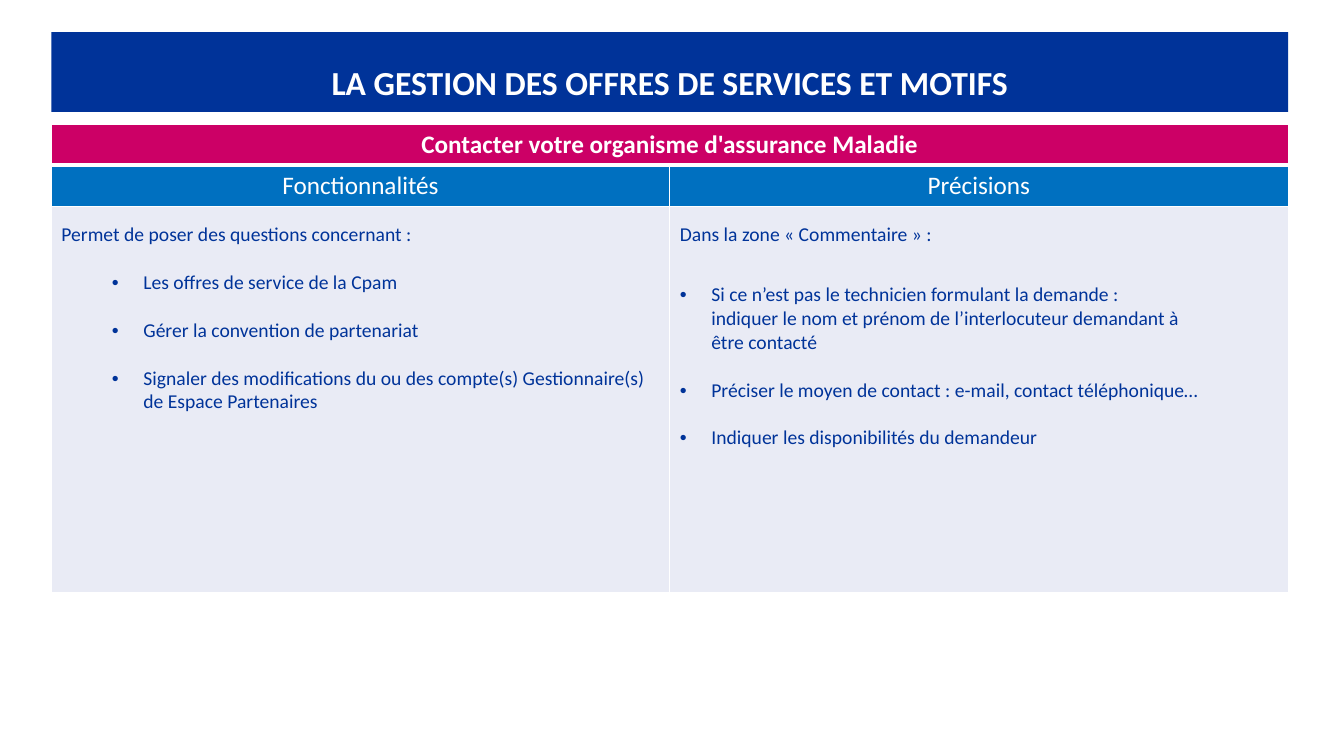
from dataclasses import dataclass

from lxml import etree
from pptx import Presentation
from pptx.dml.color import RGBColor
from pptx.enum.text import MSO_ANCHOR, MSO_AUTO_SIZE, PP_ALIGN
from pptx.oxml.ns import qn
from pptx.table import _Cell
from pptx.text.text import _Paragraph
from pptx.util import Pt

CENTER, LEFT = PP_ALIGN.CENTER, PP_ALIGN.LEFT
MIDDLE, TOP = MSO_ANCHOR.MIDDLE, MSO_ANCHOR.TOP
NO_FIT = MSO_AUTO_SIZE.NONE

WHITE = RGBColor(0xFF, 0xFF, 0xFF)
NAVY = RGBColor(0x00, 0x33, 0x99)
PINK = RGBColor(0xCC, 0x00, 0x66)
BLUE = RGBColor(0x00, 0x70, 0xC0)
PALE = RGBColor(0xE9, 0xEB, 0xF5)

FONT = "Calibri"
EDGE, WIDTH = 36.72, 883.44
ROWS = (28.8, 26.64, 275.76)
HANG = 22.5
DEEP = 58.5
GAP = 17.1


@dataclass
class Line:
    text: str
    size: float = 14
    color: RGBColor = NAVY
    bold: bool = False
    align: PP_ALIGN = LEFT
    space: float = 1
    before: float = 0
    margin: float = 0
    bullet: bool = False


def head(text: str, size: float = 18, bold: bool = False, space: float = 1) -> Line:
    return Line(text, size, WHITE, bold, CENTER, space)


def item(text: str, margin: float = HANG, before: float = GAP) -> Line:
    return Line(text, before=before, margin=margin, bullet=True)


TITLE = head("LA GESTION DES OFFRES DE SERVICES ET MOTIFS", 24, True, 1.5)
BANNER = head("Contacter votre organisme d'assurance Maladie", bold=True)
HEADS = (head("Fonctionnalités"), head("Précisions"))
BODIES = (
    [
        Line("Permet de poser des questions concernant :", space=1.5),
        item("Les offres de service de la Cpam", DEEP),
        item("Gérer la convention de partenariat", DEEP),
        item("Signaler des modifications du ou des compte(s) Gestionnaire(s) "
             "de Espace Partenaires", DEEP),
    ],
    [
        Line("Dans la zone « Commentaire » :", space=1.5),
        item("Si ce n’est pas le technicien formulant la demande :",
             before=1.5 * GAP),
        Line("indiquer le nom et prénom de l’interlocuteur demandant à",
             margin=HANG),
        Line("être contacté", margin=HANG),
        item("Préciser le moyen de contact : e-mail, contact téléphonique…"),
        item("Indiquer les disponibilités du demandeur"),
    ],
)


def write(par: _Paragraph, line: Line) -> None:
    props = par._p.get_or_add_pPr()
    props.set("marL", str(Pt(line.margin)))
    props.set("indent", str(-Pt(HANG) if line.bullet else 0))
    if line.bullet:
        etree.SubElement(props, qn("a:buFont"), typeface="Arial")
        etree.SubElement(props, qn("a:buChar"), char="•")
    else:
        etree.SubElement(props, qn("a:buNone"))
    par.alignment = line.align
    par.line_spacing = float(line.space)
    par.space_before = Pt(line.before)
    par.space_after = Pt(0)
    run = par.add_run()
    run.text = line.text
    run.font.name = FONT
    run.font.size = Pt(line.size)
    run.font.bold = line.bold
    run.font.color.rgb = line.color


def border(cell: _Cell, top: float, bottom: float) -> None:
    """Draw white lines on all four sides of the cell."""
    props = cell._tc.get_or_add_tcPr()
    sides = (("a:lnL", 1), ("a:lnR", 1), ("a:lnT", top), ("a:lnB", bottom))
    for spot, (tag, width) in enumerate(sides):
        edge = etree.Element(qn(tag), w=str(Pt(width)))
        fill = etree.SubElement(edge, qn("a:solidFill"))
        etree.SubElement(fill, qn("a:srgbClr"), val=str(WHITE))
        props.insert(spot, edge)


def fill_cell(cell: _Cell, lines: list[Line], color: RGBColor,
              top: float = 1, bottom: float = 1) -> None:
    cell.fill.solid()
    cell.fill.fore_color.rgb = color
    cell.vertical_anchor = TOP
    border(cell, top, bottom)
    frame = cell.text_frame
    for num, line in enumerate(lines):
        write(frame.add_paragraph() if num else frame.paragraphs[0], line)


def main() -> None:
    deck = Presentation()
    deck.slide_width, deck.slide_height = Pt(960), Pt(540)
    slide = deck.slides.add_slide(deck.slide_layouts[5])

    title = slide.shapes.title
    title.left, title.top = Pt(EDGE), Pt(23)
    title.width, title.height = Pt(WIDTH), Pt(57)
    title.fill.solid()
    title.fill.fore_color.rgb = NAVY
    title.text_frame.auto_size = NO_FIT
    title.text_frame.word_wrap = True
    title.text_frame.vertical_anchor = MIDDLE
    write(title.text_frame.paragraphs[0], TITLE)

    table = slide.shapes.add_table(
        len(ROWS), len(HEADS), Pt(EDGE), Pt(88.9), Pt(WIDTH), Pt(sum(ROWS))).table
    for row, height in zip(table.rows, ROWS):
        row.height = Pt(height)
    for col in table.columns:
        col.width = Pt(WIDTH / len(HEADS))

    table.cell(0, 0).merge(table.cell(0, 1))
    fill_cell(table.cell(0, 0), [BANNER], PINK, bottom=3)
    fill_cell(table.cell(0, 1), [], PINK, bottom=3)
    for col, (label, body) in enumerate(zip(HEADS, BODIES)):
        fill_cell(table.cell(1, col), [label], BLUE, top=3)
        fill_cell(table.cell(2, col), body, PALE)

    deck.save("out.pptx")


if __name__ == "__main__":
    main()
